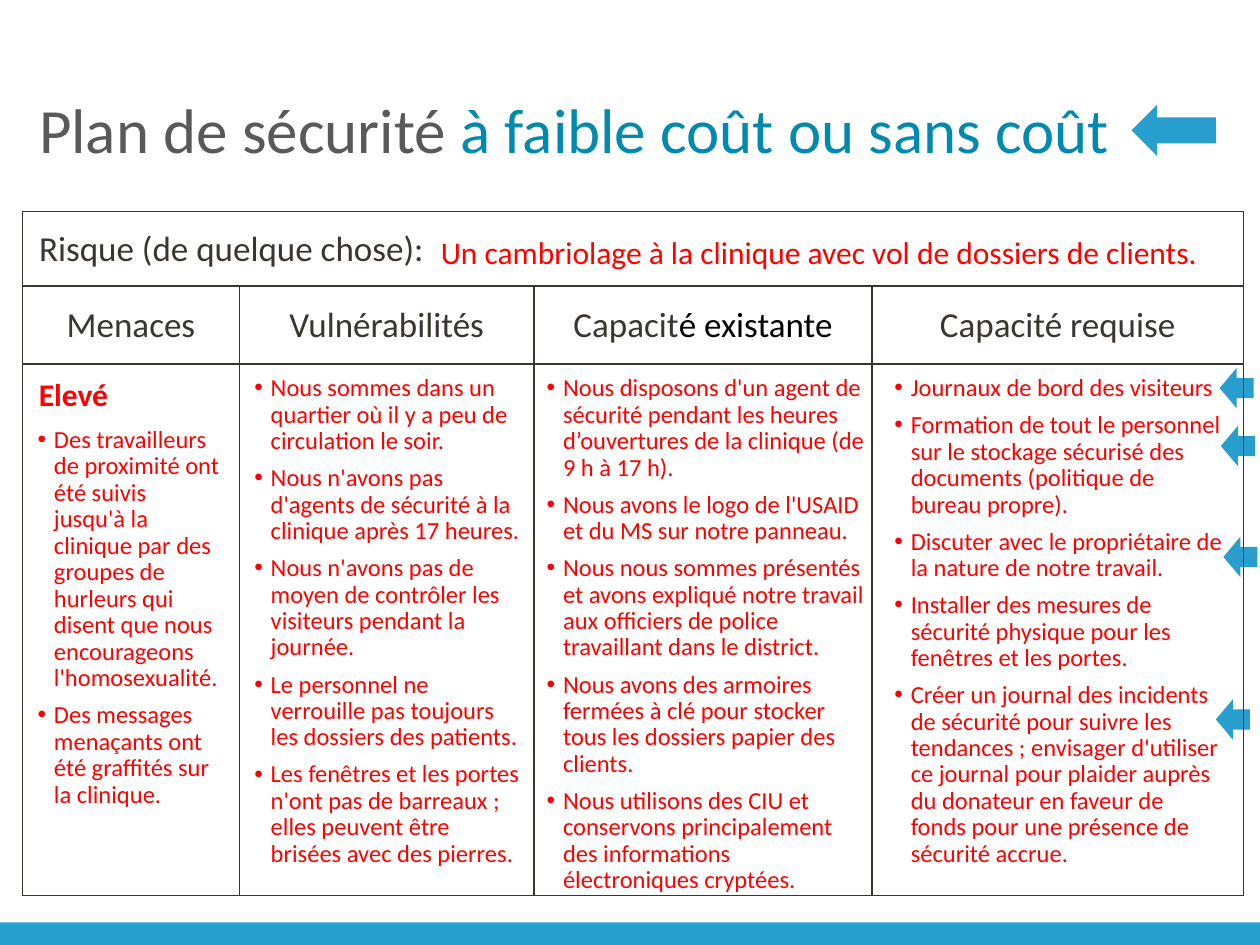
from lxml import etree
from pptx import Presentation, util as u
from pptx.dml.color import RGBColor
from pptx.enum import shapes, text
from pptx.oxml.ns import qn

BLUE = RGBColor(0x27, 0x9E, 0xCE)
TEAL = RGBColor(0x01, 0x89, 0xB0)
GREY = RGBColor(0x59, 0x59, 0x59)
DARK = RGBColor(0x3B, 0x35, 0x2F)
BLACK = RGBColor(0, 0, 0)
RED = RGBColor(0xFF, 0, 0)

# Content
TITLE = [("Plan de sécurité ", GREY), ("à faible coût ou sans coût", TEAL)]
RISK_LABEL = "Risque (de quelque chose):"
RISK = "Un cambriolage à la clinique avec vol de dossiers de clients."
LEVEL = "Elevé"
# Each column: width, offset of its list, width of its list, heading, items
COLUMNS = [
    (1.72, 0.02, 1.65, [("Menaces", DARK)], [
        "Des travailleurs de proximité ont été suivis jusqu'à la clinique par des groupes "
        "de hurleurs qui disent que nous encourageons l'homosexualité.",
        "Des messages menaçants ont été graffités sur la clinique."]),
    (2.34, 0.02, 2.31, [("Vulnérabilités", DARK)], [
        "Nous sommes dans un quartier où il y a peu de circulation le soir.",
        "Nous n'avons pas d'agents de sécurité à la clinique après 17 heures.",
        "Nous n'avons pas de moyen de contrôler les visiteurs pendant la journée.",
        "Le personnel ne verrouille pas toujours les dossiers des patients.",
        "Les fenêtres et les portes n'ont pas de barreaux ; elles peuvent être brisées "
        "avec des pierres."]),
    (2.68, 0, 2.72, [("Capacit", DARK), ("é existante", BLACK)], [
        "Nous disposons d'un agent de sécurité pendant les heures d’ouvertures de la "
        "clinique (de 9 h à 17 h).",
        "Nous avons le logo de l'USAID et du MS sur notre panneau.",
        "Nous nous sommes présentés et avons expliqué notre travail aux officiers de "
        "police travaillant dans le district.",
        "Nous avons des armoires fermées à clé pour stocker tous les dossiers papier "
        "des clients.",
        "Nous utilisons des CIU et conservons principalement des informations "
        "électroniques cryptées."]),
    (2.95, 0.08, 2.81, [("Capacité requise", DARK)], [
        "Journaux de bord des visiteurs",
        "Formation de tout le personnel sur le stockage sécurisé des documents "
        "(politique de bureau propre).",
        "Discuter avec le propriétaire de la nature de notre travail.",
        "Installer des mesures de sécurité physique pour les fenêtres et les portes.",
        "Créer un journal des incidents de sécurité pour suivre les tendances ; envisager "
        "d'utiliser ce journal pour plaider auprès du donateur en faveur de fonds pour une "
        "présence de sécurité accrue."]),
]
ROWS = [0.59, 0.62, 4.22]
TABLE_LEFT, TABLE_TOP = 0.18, 1.68
LIST_TOP, LEVEL_HEIGHT = 2.93, 0.41
TITLE_ARROW = (8.98, 0.83, 0.67, 0.41)
# Low-cost measures pointed out beside the last column
MEASURE_ARROWS = [(9.68, 2.92), (9.69, 3.38), (9.71, 4.26), (9.65, 5.55)]


def inches(*values):
    return [u.Inches(value) for value in values]


def write(para, spans, size, bold=False, align=text.PP_ALIGN.LEFT):
    para.alignment = align
    for words, color in spans:
        span = para.add_run()
        span.text = words
        span.font.name, span.font.size, span.font.bold = "Calibri", u.Pt(size), bold
        span.font.color.rgb = color


def add_text(page, place, items, size, bold=False, bullets=False):
    frame = page.shapes.add_textbox(*inches(*place)).text_frame
    frame.word_wrap = True
    for index, item in enumerate(items):
        para = frame.add_paragraph() if index else frame.paragraphs[0]
        if bullets:
            props = para._p.get_or_add_pPr()
            props.set("marL", str(u.Inches(0.13)))
            props.set("indent", str(-u.Inches(0.13)))
            etree.SubElement(props, qn("a:buFont")).set("typeface", "Arial")
            etree.SubElement(props, qn("a:buChar")).set("char", "•")
            para.line_spacing = 0.9
            para.space_before = u.Pt(6 if index else 0)
        write(para, [(item, RED)], size, bold)


def add_block(page, kind, place):
    block = page.shapes.add_shape(kind, *inches(*place))
    block.shadow.inherit = False
    block.fill.solid()
    block.fill.fore_color.rgb = BLUE
    block.line.fill.background()


def style_cell(cell):
    props = cell._tc.get_or_add_tcPr()
    for side in ("lnL", "lnR", "lnT", "lnB"):
        line = etree.SubElement(props, qn("a:" + side), w=str(u.Pt(1)))
        fill = etree.SubElement(line, qn("a:solidFill"))
        etree.SubElement(fill, qn("a:srgbClr"), val=str(DARK))
    cell.fill.background()
    cell.vertical_anchor = text.MSO_ANCHOR.MIDDLE
    cell.margin_left = cell.margin_right = cell.margin_top = u.Inches(0.01)
    cell.margin_bottom = 0


def add_grid(page):
    widths = [column[0] for column in COLUMNS]
    place = inches(TABLE_LEFT, TABLE_TOP, sum(widths), sum(ROWS))
    grid = page.shapes.add_table(len(ROWS), len(widths), *place).table
    grid.first_row = grid.horz_banding = False
    for column, width in zip(grid.columns, widths):
        column.width = u.Inches(width)
    for row, height in zip(grid.rows, ROWS):
        row.height = u.Inches(height)
    for cell in grid.iter_cells():
        style_cell(cell)
    risk = grid.cell(0, 0)
    risk.merge(grid.cell(0, len(widths) - 1))
    risk.margin_left = u.Inches(0.13)
    write(risk.text_frame.paragraphs[0], [(RISK_LABEL, DARK)], 20)
    for index, column in enumerate(COLUMNS):
        para = grid.cell(1, index).text_frame.paragraphs[0]
        write(para, column[3], 20, align=text.PP_ALIGN.CENTER)


def main():
    deck = Presentation()
    deck.slide_width, deck.slide_height = inches(10, 7.5)
    page = deck.slides.add_slide(deck.slide_layouts[5])

    # Title
    title = page.shapes.title
    title.left, title.top, title.width, title.height = inches(0.21, 0.49, 8.99, 1.06)
    title.text_frame.vertical_anchor = text.MSO_ANCHOR.MIDDLE
    write(title.text_frame.paragraphs[0], TITLE, 36)

    # Bottom bar and arrows
    add_block(page, shapes.MSO_SHAPE.RECTANGLE, (0, 7.32, 10, 0.18))
    add_block(page, shapes.MSO_SHAPE.LEFT_ARROW, TITLE_ARROW)
    for left, top in MEASURE_ARROWS:
        add_block(page, shapes.MSO_SHAPE.LEFT_ARROW, (left, top, 0.27, 0.32))

    # Risk table with the lists laid over its last row
    add_grid(page)
    add_text(page, (3.4, 1.8, 6.41, 0.4), [RISK], 18)
    add_text(page, (0.21, LIST_TOP, 1.04, 0.4), [LEVEL], 18, bold=True)
    left = TABLE_LEFT
    for index, (width, offset, list_width, _, items) in enumerate(COLUMNS):
        drop = 0 if index else LEVEL_HEIGHT
        place = (left + offset, LIST_TOP + drop, list_width, ROWS[2] - drop)
        add_text(page, place, items, 14, bullets=True)
        left += width

    deck.save("out.pptx")


if __name__ == "__main__":
    main()
